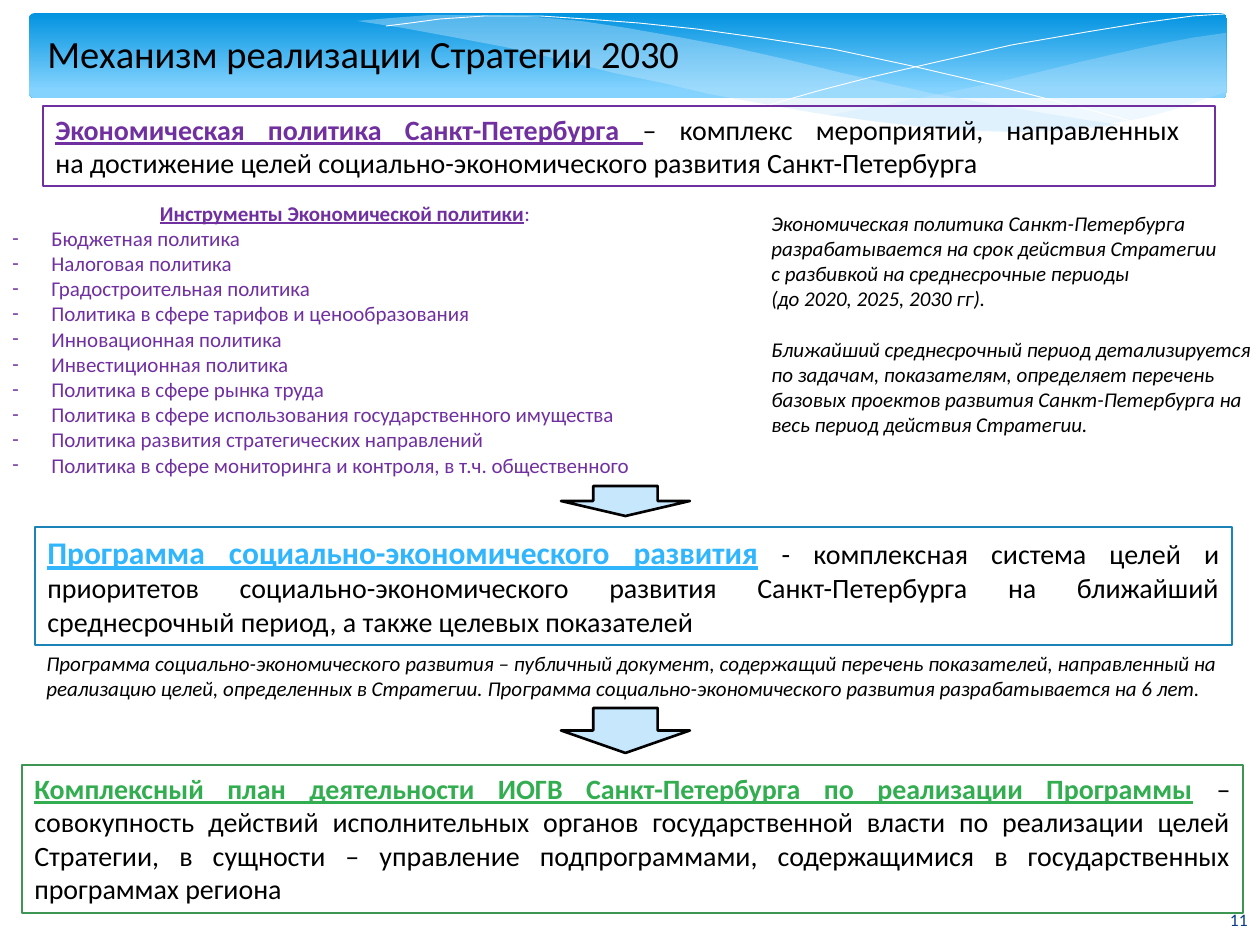
from lxml import etree
from pptx import Presentation
from pptx.dml.color import RGBColor
from pptx.enum.shapes import MSO_SHAPE
from pptx.enum.text import MSO_ANCHOR, PP_ALIGN
from pptx.oxml.ns import qn
from pptx.util import Emu, Pt

PX = 914400 / 126
FONT = "Calibri"
RECT, ROUNDED, ARROW = MSO_SHAPE.RECTANGLE, MSO_SHAPE.ROUNDED_RECTANGLE, MSO_SHAPE.DOWN_ARROW
LEFT, CENTER, RIGHT, JUSTIFY = PP_ALIGN.LEFT, PP_ALIGN.CENTER, PP_ALIGN.RIGHT, PP_ALIGN.JUSTIFY
TOP, MIDDLE = MSO_ANCHOR.TOP, MSO_ANCHOR.MIDDLE

BLACK = RGBColor(0x00, 0x00, 0x00)
WHITE = RGBColor(0xFF, 0xFF, 0xFF)
NAVY = RGBColor(0x07, 0x3E, 0x87)
PURPLE = RGBColor(0x70, 0x30, 0xA0)
SKY = RGBColor(0x31, 0xB6, 0xFD)
BLUE_LINE = RGBColor(0x1C, 0x83, 0xB9)
GREEN = RGBColor(0x32, 0xAE, 0x51)
GREEN_LINE = RGBColor(0x3D, 0x96, 0x53)
PALE_BLUE = RGBColor(0xC6, 0xE7, 0xFC)
BANNER_TOP = RGBColor(0x02, 0x93, 0xE0)
BANNER_BOTTOM = RGBColor(0x83, 0xD3, 0xFE)

RIGHT_WAVE = [
    (1225, 33), (1191, 38), (1155, 45), (1119, 53), (1080, 62), (1011, 79), (945, 93),
    (885, 105), (829, 115), (866, 120), (917, 126), (965, 130), (1008, 131), (1060, 130),
    (1105, 125), (1147, 117), (1183, 107), (1208, 98), (1226, 92), (1226, 33)]
LONG_WAVE = [
    (1120, 125), (1086, 120), (1013, 108), (930, 93), (838, 72), (789, 60), (731, 47),
    (678, 37), (627, 28), (581, 21), (525, 16), (474, 15), (430, 15), (391, 18), (357, 21),
    (403, 28), (452, 37), (505, 47), (562, 60), (614, 73), (663, 83), (709, 94), (753, 102),
    (815, 113), (871, 121), (922, 127), (969, 131), (1013, 132), (1065, 131), (1099, 127)]
FALLING_LINE = [
    (386, 26), (410, 23), (440, 19), (484, 16), (541, 16), (586, 19), (639, 23), (697, 29),
    (762, 38), (833, 49), (912, 66), (998, 86), (1090, 110), (1139, 123)]
RISING_LINE = [
    (769, 105), (818, 91), (872, 77), (937, 62), (1012, 45), (1087, 32), (1142, 23),
    (1193, 16), (1225, 14)]

INSTRUMENTS = [
    "Бюджетная политика",
    "Налоговая политика",
    "Градостроительная политика",
    "Политика в сфере тарифов и ценообразования",
    "Инновационная политика",
    "Инвестиционная политика",
    "Политика в сфере рынка труда",
    "Политика в сфере использования государственного имущества",
    "Политика развития стратегических направлений",
    "Политика в сфере мониторинга и контроля, в т.ч. общественного",
]
PERIOD_NOTES = [
    "Экономическая политика Санкт-Петербурга разрабатывается на срок действия Стратегии \n"
    "с разбивкой на среднесрочные периоды \n(до 2020, 2025, 2030 гг).",
    "Ближайший среднесрочный период детализируется по задачам, показателям, определяет "
    "перечень базовых проектов развития Санкт-Петербурга на весь период действия Стратегии.",
]


def emu(*lengths):
    return [Emu(round(n * PX)) for n in lengths]


def add_run(p, text, size, color, bold=False, italic=False, underline=False):
    """Add text to a paragraph, with a line break at each newline."""
    for i, line in enumerate(text.split("\n")):
        if i:
            p.add_line_break()
        r = p.add_run()
        r.text = line
        r.font.name, r.font.size, r.font.color.rgb = FONT, Pt(size), color
        r.font.bold, r.font.italic, r.font.underline = bold, italic, underline


def add_text(slide, box, align=LEFT, anchor=TOP):
    """Add a wrapping text box and return its text frame."""
    tf = slide.shapes.add_textbox(*emu(*box)).text_frame
    tf.word_wrap = True
    tf.vertical_anchor = anchor
    tf.paragraphs[0].alignment = align
    return tf


def add_shape(slide, kind, box, fill=None, line=None, width=1.5):
    s = slide.shapes.add_shape(kind, *emu(*box))
    s.shadow.inherit = False
    paint(s, fill, line, width)
    return s


def paint(s, fill, line, width):
    if fill is None:
        s.fill.background()
    else:
        s.fill.solid()
        s.fill.fore_color.rgb = fill
    if line is None:
        s.line.fill.background()
    else:
        s.line.color.rgb = line
        s.line.width = Pt(width)


def add_curve(slide, points, fill=None, opacity=100, line=None):
    builder = slide.shapes.build_freeform(*points[0], scale=PX)
    builder.add_line_segments(points[1:], close=fill is not None)
    s = builder.convert_to_shape()
    s.shadow.inherit = False
    paint(s, fill, line, 0.5)
    if fill is not None:
        color = s.fill._xPr.find(qn("a:solidFill"))[0]
        etree.SubElement(color, qn("a:alpha"), val=str(opacity * 1000))


def add_banner(slide, box):
    s = add_shape(slide, ROUNDED, box)
    s.adjustments[0] = 0.07
    s.fill.gradient()
    s.fill.gradient_angle = 270
    stops = zip(s.fill.gradient_stops, (0, 0.9), (BANNER_TOP, BANNER_BOTTOM))
    for stop, position, color in stops:
        stop.position = position
        stop.color.rgb = color
    add_curve(slide, RIGHT_WAVE, PALE_BLUE, 29)
    add_curve(slide, LONG_WAVE, PALE_BLUE, 40)
    for points in (FALLING_LINE, RISING_LINE):
        add_curve(slide, points, line=WHITE)


def add_definition(slide, box, term, text, color, line, size=16, width=1.25):
    """Add a framed box with an underlined term and its meaning."""
    s = add_shape(slide, RECT, box, None, line, width)
    tf = s.text_frame
    tf.word_wrap = True
    tf.vertical_anchor = TOP
    p = tf.paragraphs[0]
    p.alignment = JUSTIFY
    add_run(p, term, size, color, bold=True, underline=True)
    add_run(p, text, 16, BLACK)


def add_instruments(slide, box):
    tf = add_text(slide, box, CENTER)
    p = tf.paragraphs[0]
    add_run(p, "Инструменты Экономической политики", 12, PURPLE, bold=True, underline=True)
    add_run(p, ":", 12, PURPLE)
    indent = emu(39)[0]
    for name in INSTRUMENTS:
        p = tf.add_paragraph()
        add_run(p, name, 12, PURPLE)
        pPr = p._p.get_or_add_pPr()
        pPr.set("marL", str(indent))
        pPr.set("indent", str(-indent))
        etree.SubElement(pPr, qn("a:buFont"), typeface=FONT)
        etree.SubElement(pPr, qn("a:buChar"), char="-")


def add_period_notes(slide, box):
    tf = add_text(slide, box)
    first, second = tf.paragraphs[0], tf.add_paragraph()
    second.space_before = Pt(14.4)
    for p, text in zip((first, second), PERIOD_NOTES):
        add_run(p, text, 12, BLACK, italic=True)


def add_line_of_text(slide, box, text, size, color, align=LEFT, anchor=MIDDLE, italic=False):
    tf = add_text(slide, box, align, anchor)
    add_run(tf.paragraphs[0], text, size, color, italic=italic)


def main():
    prs = Presentation()
    prs.slide_width, prs.slide_height = emu(1260, 945)
    slide = prs.slides.add_slide(prs.slide_layouts[6])

    add_banner(slide, (29, 13, 1198, 85))
    add_line_of_text(slide, (35, 0, 1260, 106), "Механизм реализации Стратегии 2030", 22, BLACK)
    add_period_notes(slide, (759, 204, 520, 242))
    add_instruments(slide, (0, 194, 690, 292))
    add_definition(
        slide, (43, 106, 1172, 80), "Экономическая политика Санкт-Петербурга ",
        "– комплекс мероприятий, направленных \n"
        "на достижение целей социально-экономического развития Санкт-Петербурга",
        PURPLE, PURPLE, width=1.5)
    add_definition(
        slide, (35, 527, 1197, 118), "Программа социально-экономического развития",
        " - комплексная система целей и приоритетов социально-экономического развития "
        "Санкт-Петербурга на ближайший среднесрочный период, а также целевых показателей",
        SKY, BLUE_LINE, size=18)
    add_line_of_text(
        slide, (34, 644, 1196, 63),
        "Программа социально-экономического развития – публичный документ, содержащий "
        "перечень показателей, направленный на реализацию целей, определенных в Стратегии. "
        "Программа социально-экономического развития разрабатывается на 6 лет.",
        12, BLACK, JUSTIFY, TOP, italic=True)
    add_definition(
        slide, (22, 765, 1221, 148),
        "Комплексный план деятельности ИОГВ Санкт-Петербурга по реализации Программы",
        " – совокупность действий исполнительных органов государственной власти по реализации "
        "целей Стратегии, в сущности – управление подпрограммами, содержащимися в "
        "государственных программах региона",
        GREEN, GREEN_LINE)
    for top, height in ((486, 30), (708, 45)):
        add_shape(slide, ARROW, (561, top, 129, height), PALE_BLUE, BLACK)
    add_line_of_text(slide, (1100, 895, 160, 50), "11", 10, NAVY, RIGHT)

    prs.save("out.pptx")


if __name__ == "__main__":
    main()
